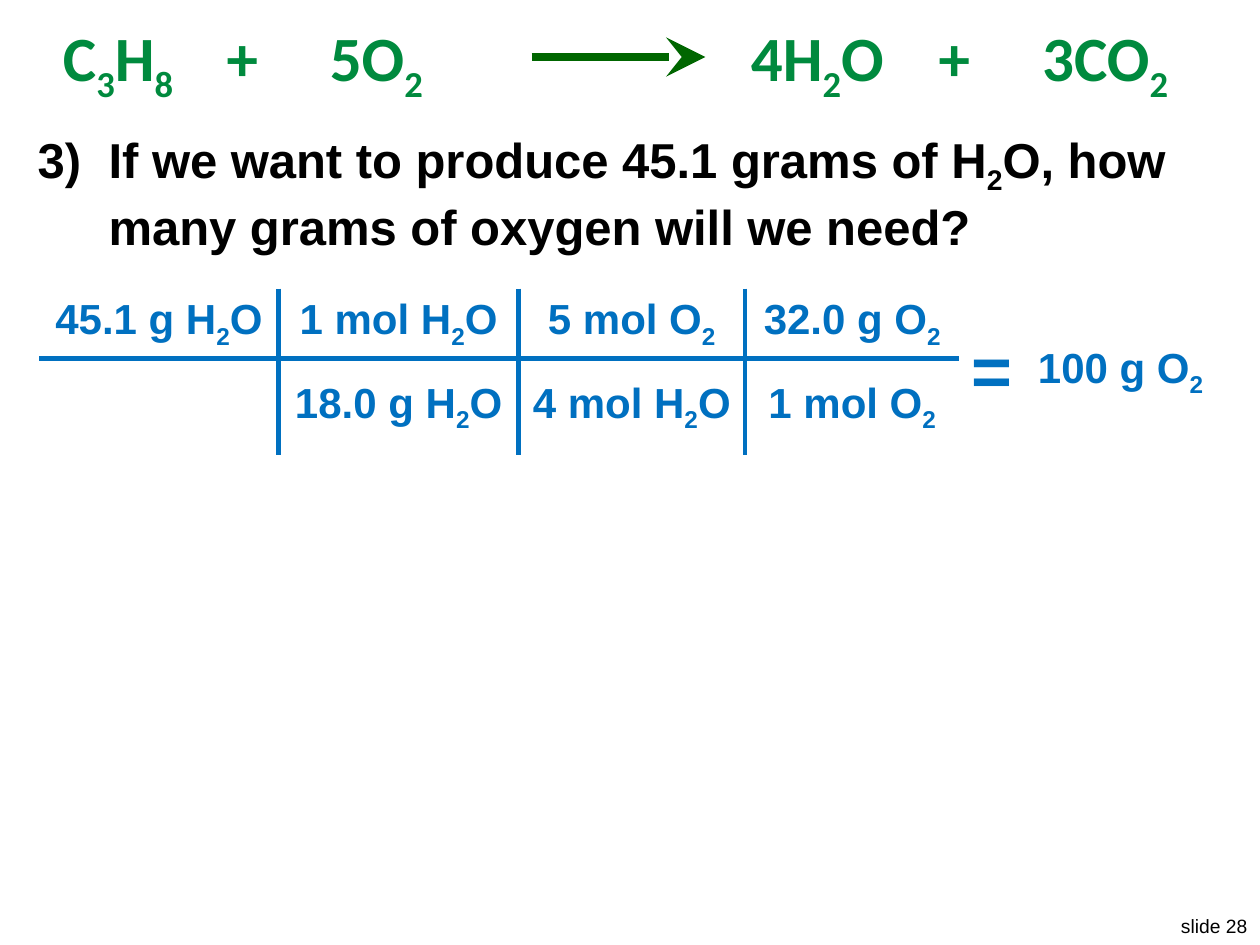
from lxml.etree import SubElement
from pptx import Presentation
from pptx.dml.color import RGBColor
from pptx.enum.shapes import MSO_CONNECTOR as Conn
from pptx.enum.text import MSO_ANCHOR as Anchor, PP_ALIGN as Align
from pptx.oxml import parse_xml
from pptx.oxml.ns import nsdecls, qn
from pptx.util import Cm, Pt

BLUE = "0070C0"
GREEN = "008A3E"
HEAD = dict(name="Calibri", size=Pt(36), bold=True)
ASK = dict(name="Arial", size=Pt(28), bold=True)
CELL = dict(name="Arial", size=Pt(24), bold=True)
SIGN = dict(CELL, size=Pt(40))
FOOT = dict(name="Arial", size=Pt(11), bold=False)


def paint(target, tone):
    target.rgb = RGBColor.from_string(tone)


def put(para, text, look, tone):
    first, *rest = text.split("_")
    parts = [(first, False)]
    for part in rest:
        parts += [(part[0], True), (part[1:], False)]
    for word, low in parts:
        if not word:
            continue
        run = para.add_run()
        run.text = word
        for key, value in look.items():
            setattr(run.font, key, value)
        paint(run.font.color, tone)
        if low:
            run.font._element.set("baseline", "-25000")


def add_box(shapes, box, text, look, tone, wrap=True):
    frame = shapes.add_textbox(*map(Cm, box)).text_frame
    frame.word_wrap = wrap
    para = frame.paragraphs[0]
    put(para, text, look, tone)
    return para


def add_react(slide, box):
    left, top, _, _ = box
    group = slide.shapes.add_group_shape()
    text = "C_3H_8\t+\t5O_2\t4H_2O\t+\t3CO_2"
    para = add_box(group.shapes, box, text, HEAD, GREEN)
    tabs = SubElement(para._p.get_or_add_pPr(), qn("a:tabLst"))
    for stop in (3.3, 5.38, 13.87, 17.65, 19.74):
        SubElement(tabs, qn("a:tab"), pos=str(Cm(stop)), algn="l")
    y = Cm(top + 0.9)
    arrow = group.shapes.add_connector(
        Conn.STRAIGHT, Cm(left + 9.7), y, Cm(left + 13.2), y)
    arrow.line.width = Pt(4.5)
    paint(arrow.line.color, "006600")
    SubElement(arrow.line._get_or_add_ln(), qn("a:tailEnd"),
               type="stealth", w="lg", len="lg")
    SubElement(arrow._element.spPr, qn("a:effectLst"))


def add_ask(slide, box):
    text = "If we want to produce 45.1 grams of H_2O, how many grams of oxygen will we need?"
    para = add_box(slide.shapes, box, text, ASK, "000000")
    props = para._p.get_or_add_pPr()
    dent = Cm(1.43)
    props.set("marL", str(dent))
    props.set("indent", str(-dent))
    SubElement(props, qn("a:buFont"), typeface="Arial")
    SubElement(props, qn("a:buAutoNum"), type="arabicParenR", startAt="3")


def rule(cell, sides):
    props = cell._tc.get_or_add_tcPr()
    for spot, (side, shown) in enumerate(sides.items()):
        fill = (f'<a:solidFill><a:srgbClr val="{BLUE}"/></a:solidFill>'
                if shown else "<a:noFill/>")
        props.insert(spot, parse_xml(
            f'<a:ln{side} {nsdecls("a")} w="{Pt(3)}">{fill}</a:ln{side}>'))


def add_grid(slide, box):
    rows = (
        ("45.1 g H_2O", "1 mol H_2O", "5 mol O_2", "32.0 g O_2", "=", "100 g O_2"),
        ("", "18.0 g H_2O", "4 mol H_2O", "1 mol O_2", "", ""),
    )
    wides = (4.83, 4.83, 4.57, 4.32, 1.22, 4.06)
    table = slide.shapes.add_table(2, 6, *map(Cm, box)).table
    table.first_row = table.horz_banding = False
    for col, wide in zip(table.columns, wides):
        col.width = Cm(wide)
    for row, high in zip(table.rows, (1.4, 1.95)):
        row.height = Cm(high)
    for r, row in enumerate(rows):
        for c, text in enumerate(row):
            cell = table.cell(r, c)
            cell.fill.background()
            cell.vertical_anchor = Anchor.MIDDLE
            rule(cell, dict(L=1 <= c <= 3, R=c <= 2,
                            T=r == 1 and c <= 3, B=r == 0 and c <= 3))
            para = cell.text_frame.paragraphs[0]
            para.alignment = Align.CENTER
            put(para, text, SIGN if text == "=" else CELL, BLUE)
    for c in (4, 5):
        table.cell(0, c).merge(table.cell(1, c))


def add_foot(slide, box):
    para = add_box(slide.shapes, box, "slide 28", FOOT, "000000", False)
    para.alignment = Align.RIGHT


def main():
    deck = Presentation()
    deck.slide_width, deck.slide_height = Cm(25.4), Cm(19.05)
    slide = deck.slides.add_slide(deck.slide_layouts[6])
    add_foot(slide, (23.5, 18.31, 1.9, 0.74))
    add_ask(slide, (0.51, 2.49, 24.38, 15.37))
    add_react(slide, (1.02, 0.25, 23.39, 1.8))
    add_grid(slide, (0.79, 5.82, 23.83, 3.35))
    deck.save("out.pptx")


if __name__ == "__main__":
    main()
